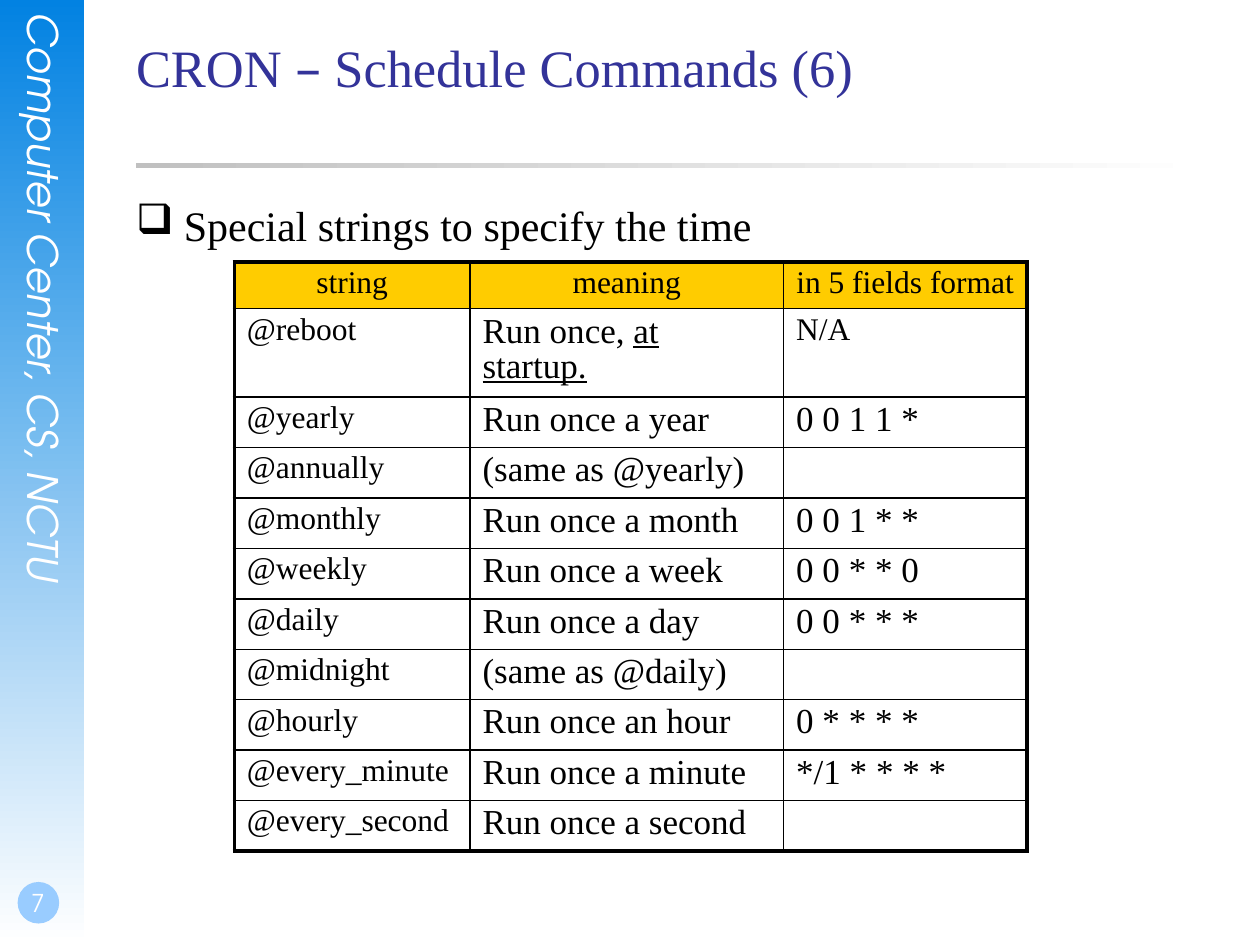
from lxml import etree
from pptx import Presentation
from pptx.dml.color import RGBColor
from pptx.enum.shapes import MSO_SHAPE
from pptx.enum.text import MSO_ANCHOR, PP_ALIGN
from pptx.oxml.ns import qn
from pptx.util import Inches, Pt

RECT, OVAL = MSO_SHAPE.RECTANGLE, MSO_SHAPE.OVAL
LEFT, CENTER = PP_ALIGN.LEFT, PP_ALIGN.CENTER
TOP, BOTTOM = MSO_ANCHOR.TOP, MSO_ANCHOR.BOTTOM
SERIF, SANS, DASH_FONT = "Times New Roman", "TeX Gyre Adventor", "DejaVu Sans"
COLORS = {
    "blue": "0282E2",
    "white": "FFFFFF",
    "badge": "99CCFF",
    "silver": "C0C0C0",
    "navy": "333399",
    "black": "000000",
    "gold": "FFCC00",
}


def rgb(name):
    return RGBColor.from_string(COLORS[name])


def write(paragraph, text, size=18, font=SERIF, color="black", italic=False,
          underline=False, align=LEFT):
    paragraph.alignment = align
    run = paragraph.add_run()
    run.text = text
    run.font.size = Pt(size)
    run.font.name = font
    run.font.color.rgb = rgb(color)
    run.font.italic = italic
    run.font.underline = underline


prs = Presentation()
prs.slide_width, prs.slide_height = Inches(10), Inches(7.5)
slide = prs.slides.add_slide(prs.slide_layouts[6])

for kind, box, start, end, angle in [
    (RECT, (0, 0, 0.67, 7.5), "blue", "white", 270),
    (OVAL, (0.14, 7, 0.33, 0.33), "badge", None, None),
    (RECT, (1.08, 1.29, 8.5, 0.04), "silver", "white", 0),
]:
    decoration = slide.shapes.add_shape(kind, *map(Inches, box))
    decoration.shadow.inherit = False
    decoration.line.fill.background()
    if end is None:
        decoration.fill.solid()
        decoration.fill.fore_color.rgb = rgb(start)
    else:
        decoration.fill.gradient()
        decoration.fill.gradient_angle = angle
        for stop, color in zip(decoration.fill.gradient_stops, (start, end)):
            stop.color.rgb = rgb(color)

frames = []
for box, anchor, insets in [
    ((0.15, 0.1, 0.4, 5.11), TOP, (0, 0, 0, 0)),
    ((0, 6.83, 0.58, 0.5), BOTTOM, (0.02, 0, 0, 0.05)),
    ((1.08, 0.28, 8.5, 1.25), TOP, (0, 0, 0, 0)),
    ((1.08, 1.58, 8.5, 5.08), TOP, (0, 0, 0, 0)),
]:
    frame = slide.shapes.add_textbox(*map(Inches, box)).text_frame
    frame.word_wrap = True
    frame.vertical_anchor = anchor
    (frame.margin_left, frame.margin_top,
     frame.margin_right, frame.margin_bottom) = map(Inches, insets)
    frames.append(frame)
sidebar, page_number, title, body = frames

sidebar._txBody.bodyPr.set("vert", "eaVert")
write(sidebar.paragraphs[0], "Computer Center, CS, NCTU", size=24, font=SANS,
      color="white", italic=True)
write(page_number.paragraphs[0], "7", size=14, font=SANS, color="white", align=CENTER)
for text, font in [("CRON ", SERIF), ("–", DASH_FONT), (" Schedule Commands (6)", SERIF)]:
    write(title.paragraphs[0], text, size=30, font=font, color="navy")

bullet = body.paragraphs[0]
write(bullet, "Special strings to specify the time", size=24)
bullet.space_before = Pt(6)
bullet_props = bullet._p.get_or_add_pPr()
bullet_props.set("marL", str(Inches(0.38)))
bullet_props.set("indent", str(-Inches(0.38)))
etree.SubElement(bullet_props, qn("a:buChar")).set("char", "❑")

schedule = [
    ("string", "meaning", "in 5 fields format"),
    ("@reboot", "Run once, ", "N/A"),
    ("@yearly", "Run once a year", "0 0 1 1 *"),
    ("@annually", "(same as @yearly)", ""),
    ("@monthly", "Run once a month", "0 0 1 * *"),
    ("@weekly", "Run once a week", "0 0 * * 0"),
    ("@daily", "Run once a day", "0 0 * * *"),
    ("@midnight", "(same as @daily)", ""),
    ("@hourly", "Run once an hour", "0 * * * *"),
    ("@every_minute", "Run once a minute", "*/1 * * * *"),
    ("@every_second", "Run once a second", ""),
]
last_row, last_col = len(schedule) - 1, 2
table = slide.shapes.add_table(len(schedule), 3, Inches(1.86), Inches(2.08),
                               Inches(6.29), Inches(4.37)).table
table.first_row = table.horz_banding = False
for column, width in zip(table.columns, (1.87, 2.49, 1.93)):
    column.width = Inches(width)

for r, entries in enumerate(schedule):
    table.rows[r].height = Inches(0.4 if r else 0.37)
    for c, entry in enumerate(entries):
        cell = table.cell(r, c)
        if r == 0:
            cell.fill.solid()
            cell.fill.fore_color.rgb = rgb("gold")
        else:
            cell.fill.background()
        paragraph = cell.text_frame.paragraphs[0]
        paragraph.line_spacing = 0.9
        if entry:
            size = 18 if r == 0 or c == 0 or entry == "N/A" else 20
            write(paragraph, entry, size=size, align=LEFT if r else CENTER)
        outer_sides = [("lnL", c == 0), ("lnR", c == last_col),
                       ("lnT", r == 0), ("lnB", r == last_row)]
        for position, (side, outer) in enumerate(outer_sides):
            border = etree.Element(qn(f"a:{side}"), w=str(Pt(2.25 if outer else 1)))
            paint = etree.SubElement(border, qn("a:solidFill"))
            etree.SubElement(paint, qn("a:srgbClr")).set("val", COLORS["black"])
            cell._tc.get_or_add_tcPr().insert(position, border)

write(table.cell(1, 1).text_frame.paragraphs[0], "at startup.", size=20, underline=True)

prs.save("out.pptx")
